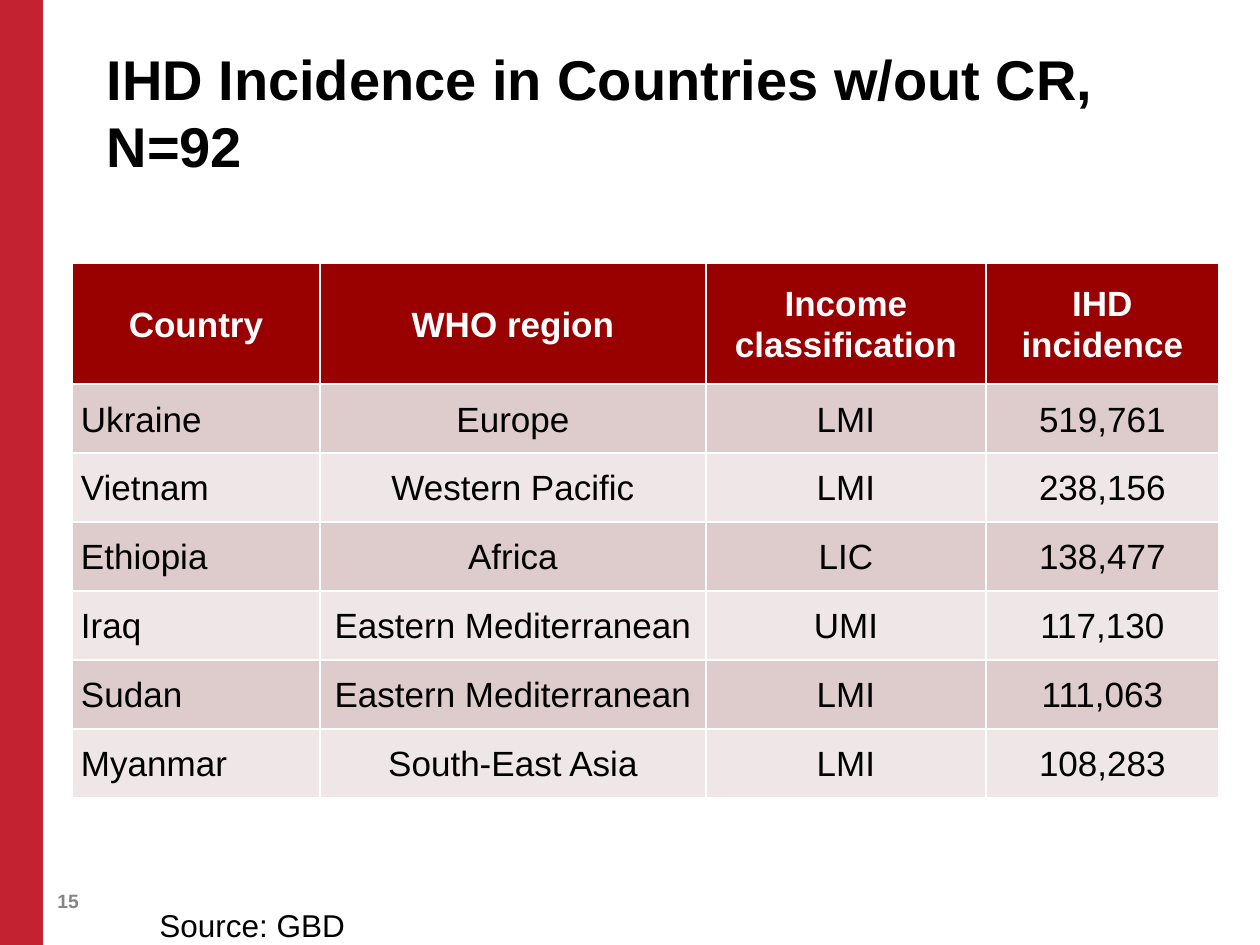
"""Build the slide on IHD incidence in countries without CR."""
from pptx import Presentation
from pptx import util as u
from pptx.dml.color import RGBColor
from pptx.enum import shapes, text

COLORS = {
    "bar": "C32330", "number": "858585", "header": "990000", "header_text": "FFFFFF",
    "odd_row": "DECCCC", "even_row": "EFE7E7", "body_text": "000000",
}
ROWS = [
    ("Country", "WHO region", "Income classification", "IHD incidence"),
    ("Ukraine", "Europe", "LMI", "519,761"),
    ("Vietnam", "Western Pacific", "LMI", "238,156"),
    ("Ethiopia", "Africa", "LIC", "138,477"),
    ("Iraq", "Eastern Mediterranean", "UMI", "117,130"),
    ("Sudan", "Eastern Mediterranean", "LMI", "111,063"),
    ("Myanmar", "South-East Asia", "LMI", "108,283"),
]
COLUMN_WIDTHS = [248, 386, 280, 233]
HEADER_HEIGHT, ROW_HEIGHT = 121, 69


def px(*lengths):
    return [u.Emu(round(length * 914400 / 126)) for length in lengths]


def style(paragraph, size, color, bold=False):
    for run in paragraph.runs:
        run.font.name = "Arial"
        run.font.size = u.Pt(size)
        run.font.bold = bold
        run.font.color.rgb = RGBColor.from_string(COLORS[color])


deck = Presentation()
deck.slide_width, deck.slide_height = px(1260, 945)
slide = deck.slides.add_slide(deck.slide_layouts[5])

red_bar = slide.shapes.add_shape(shapes.MSO_SHAPE.RECTANGLE, *px(0, 0, 43, 945))
red_bar.shadow.inherit = False
red_bar.fill.solid()
red_bar.fill.fore_color.rgb = RGBColor.from_string(COLORS["bar"])
red_bar.line.fill.background()

page_number = slide.shapes.add_textbox(*px(45, 876, 95, 50)).text_frame
page_number.word_wrap = True
page_number.vertical_anchor = text.MSO_ANCHOR.MIDDLE
page_number.text = "15"
style(page_number.paragraphs[0], 11, "number", True)

heading = slide.shapes.title
heading.left, heading.top, heading.width, heading.height = px(94, 38, 1124, 165)
heading.text_frame.text = "IHD Incidence in Countries w/out CR, N=92"
heading.text_frame.vertical_anchor = text.MSO_ANCHOR.TOP
heading.text_frame.paragraphs[0].alignment = text.PP_ALIGN.LEFT
style(heading.text_frame.paragraphs[0], 32, "body_text", True)

row_heights = [HEADER_HEIGHT] + [ROW_HEIGHT] * (len(ROWS) - 1)
incidence = slide.shapes.add_table(
    len(ROWS), len(COLUMN_WIDTHS), *px(72, 263, sum(COLUMN_WIDTHS), sum(row_heights))
).table
for column, width in zip(incidence.columns, px(*COLUMN_WIDTHS)):
    column.width = width
for row, height in zip(incidence.rows, px(*row_heights)):
    row.height = height

for r, values in enumerate(ROWS):
    is_header = r == 0
    fill = "header" if is_header else "odd_row" if r % 2 else "even_row"
    for c, value in enumerate(values):
        cell = incidence.cell(r, c)
        cell.fill.solid()
        cell.fill.fore_color.rgb = RGBColor.from_string(COLORS[fill])
        cell.vertical_anchor = text.MSO_ANCHOR.MIDDLE
        cell.margin_left, cell.margin_top, cell.margin_right, cell.margin_bottom = px(9, 0, 9, 0)
        cell.text_frame.text = value
        paragraph = cell.text_frame.paragraphs[0]
        paragraph.line_spacing = 1.07
        is_country = c == 0 and not is_header
        paragraph.alignment = text.PP_ALIGN.LEFT if is_country else text.PP_ALIGN.CENTER
        style(paragraph, 20, "header_text" if is_header else "body_text", is_header)

source_note = slide.shapes.add_textbox(*px(147, 900, 213, 50)).text_frame
source_note.word_wrap = False
source_note.auto_size = text.MSO_AUTO_SIZE.SHAPE_TO_FIT_TEXT
source_note.text = "Source: GBD"
style(source_note.paragraphs[0], 18, "body_text")

deck.save("out.pptx")
